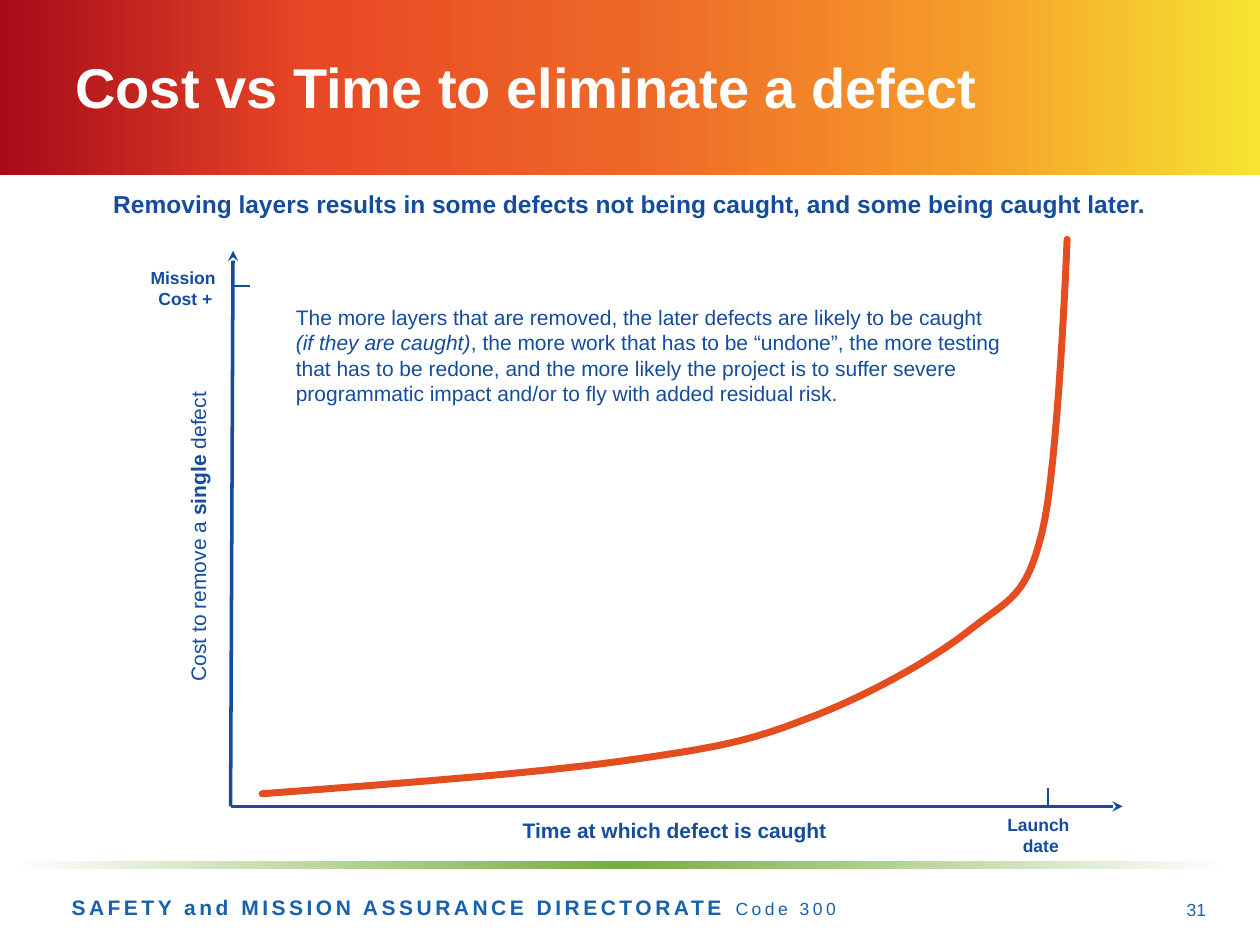
from dataclasses import dataclass

from lxml.etree import SubElement as Sub
from pptx import Presentation
from pptx.dml.color import RGBColor
from pptx.enum.shapes import MSO_CONNECTOR as Link, MSO_SHAPE as Kind
from pptx.enum.text import MSO_ANCHOR as Anchor, PP_ALIGN as Align
from pptx.oxml.ns import qn
from pptx.util import Pt

NAVY = RGBColor(0x15, 0x4C, 0x9C)
BLUE = RGBColor(0x18, 0x61, 0xAC)
RED = RGBColor(0xE3, 0x4D, 0x20)
WHITE = RGBColor(0xFF, 0xFF, 0xFF)
FIRE = ((0, "A60B19"), (25, "E94826"), (50, "ED6827"), (75, "F6982A"), (100, "F6E431"))
LEAF = ((0, "FFFFFF"), (50, "77AD3F"), (100, "FFFFFF"))
FONT = "Arial"
STEPS = 16


@dataclass
class Run:
    text: str
    size: float = 12
    bold: bool = False
    slant: bool = False
    space: float = 0


@dataclass
class Label:
    box: tuple[float, float, float, float]
    paras: list[list[Run]]
    color: RGBColor = NAVY
    align: Align = Align.CENTER
    anchor: Anchor = Anchor.TOP
    turn: float = 0
    lead: float = 1.0
    before: float = 0


@dataclass
class Line:
    start: tuple[float, float]
    end: tuple[float, float]
    width: float = 1
    arrow: bool = False


def add_band(shapes, box: tuple, stops: tuple) -> None:
    band = shapes.add_shape(Kind.RECTANGLE, *map(Pt, box))
    band.shadow.inherit = False
    band.line.fill.background()
    band.fill.gradient()
    band.fill.gradient_angle = 0
    stop_list = band._element.spPr.find(qn("a:gradFill")).find(qn("a:gsLst"))
    for old in list(stop_list):
        stop_list.remove(old)
    for place, color in stops:
        stop = Sub(stop_list, qn("a:gs"), pos=str(place * 1000))
        Sub(stop, qn("a:srgbClr"), val=color)


def add_label(shapes, label: Label) -> None:
    box = shapes.add_textbox(*map(Pt, label.box))
    box.rotation = label.turn
    frame = box.text_frame
    frame.word_wrap = True
    frame.vertical_anchor = label.anchor
    for i, runs in enumerate(label.paras):
        para = frame.add_paragraph() if i else frame.paragraphs[0]
        para.alignment = label.align
        para.line_spacing = label.lead
        para.space_before = Pt(label.before)
        for item in runs:
            for j, text in enumerate(item.text.split("\n")):
                if j:
                    para.add_line_break()
                if not text:
                    continue
                run = para.add_run()
                run.text = text
                font = run.font
                font.name, font.size = FONT, Pt(item.size)
                font.bold, font.italic = item.bold, item.slant
                font.color.rgb = label.color
                if item.space:
                    run._r.get_or_add_rPr().set("spc", str(int(item.space * 100)))


def add_line(shapes, line: Line) -> None:
    link = shapes.add_connector(Link.STRAIGHT, *map(Pt, line.start + line.end))
    link.line.color.rgb = NAVY
    link.line.width = Pt(line.width)
    if line.arrow:
        Sub(link.line._get_or_add_ln(), qn("a:tailEnd"), type="stealth")
    Sub(link._element.spPr, qn("a:effectLst"))


def trace(start: tuple, parts: tuple) -> list[tuple]:
    """Points along a chain of cubic curves."""
    points = [start]
    for b, c, d in parts:
        a = points[-1]
        for step in range(1, STEPS + 1):
            t = step / STEPS
            u = 1 - t
            mix = (u**3, 3 * u * u * t, 3 * u * t * t, t**3)
            points.append(tuple(sum(m * p[k] for m, p in zip(mix, (a, b, c, d)))
                                for k in (0, 1)))
    return points


def add_curve(shapes, points: list[tuple]) -> None:
    first, *rest = [(Pt(x), Pt(y)) for x, y in points]
    build = shapes.build_freeform(*first)
    build.add_line_segments(rest, close=False)
    curve = build.convert_to_shape()
    curve.shadow.inherit = False
    curve.fill.background()
    curve.line.color.rgb = RED
    curve.line.width = Pt(4)
    stroke = curve.line._get_or_add_ln()
    stroke.set("cap", "rnd")
    Sub(stroke, qn("a:round"))


# Chart axes and their ticks
ORIGIN = (131.76, 460.8)
LINES = [
    Line(ORIGIN, (133.2, 143.3), 2, True),
    Line(ORIGIN, (641.5, 460.8), 2, True),
    Line((599, 450), (599, 460.1)),
    Line((142.6, 163.4), (133.2, 163.4)),
]

# Cost curve
START = (149.8, 453.6)
PARTS = (
    ((226.8, 447.8), (303.8, 442.1), (355.4, 434.9)),
    ((406.8, 427.7), (427, 424.1), (460.1, 411.1)),
    ((493.2, 398.9), (532.8, 377.3), (555.1, 359.3)),
    ((578.2, 341.3), (586.1, 341.3), (595.4, 304.6)),
    ((604.8, 267.1), (609.8, 136.8), (609.8, 136.8)),
)

LABELS = [
    # Title, footer and page number
    Label((36, 9.4, 648, 84.2), [[Run("Cost vs Time to eliminate a defect", 32, True)]],
          WHITE, Align.LEFT, Anchor.MIDDLE, lead=0.9),
    Label((33.8, 507.6, 594, 21.6),
          [[Run("SAFETY and MISSION ASSURANCE DIRECTORATE ", 12, True, space=2),
            Run("Code 300", 10, space=2)]], BLUE, Align.LEFT),
    Label((665.3, 505.4, 31, 28.8), [[Run("31", 10)]], BLUE, Align.RIGHT, Anchor.MIDDLE),
    # Main message
    Label((28.8, 106.6, 662.4, 23),
          [[Run("Removing layers results in some defects not being caught, "
                "and some being caught later.", 14, True)]], lead=0.9),
    Label((162, 170.6, 443.5, 65.5),
          [[Run("The more layers that are removed, the later defects are likely "
                "to be caught \n"),
            Run("(if they are caught)", slant=True),
            Run(", the more work that has to be “undone”, the more testing \n"
                "that has to be redone, and the more likely the project is to suffer "
                "severe programmatic impact and/or to fly with added residual risk.")]],
          align=Align.LEFT, before=6),
    # Axis names
    Label((-43.9, 295.9, 313.9, 21.6),
          [[Run("Cost to remove a "), Run("single", bold=True), Run(" defect")]], turn=270),
    Label((130.3, 463.7, 510.5, 21.6), [[Run("Time at which defect is caught", bold=True)]]),
    # Tick names
    Label((77.8, 149, 56.2, 31.7),
          [[Run("Mission ", 10, True)], [Run("Cost +", 10, True)]]),
    Label((560.9, 461.5, 67.7, 31.7),
          [[Run("Launch ", 10, True)], [Run("date", 10, True)]]),
]


def main() -> None:
    deck = Presentation()
    deck.slide_width, deck.slide_height = Pt(720), Pt(540)
    shapes = deck.slides.add_slide(deck.slide_layouts[6]).shapes
    add_band(shapes, (0, 0, 720, 100), FIRE)
    add_band(shapes, (8.6, 491.8, 692, 5), LEAF)
    for line in LINES:
        add_line(shapes, line)
    add_curve(shapes, trace(START, PARTS))
    for label in LABELS:
        add_label(shapes, label)
    deck.save("out.pptx")


if __name__ == "__main__":
    main()
